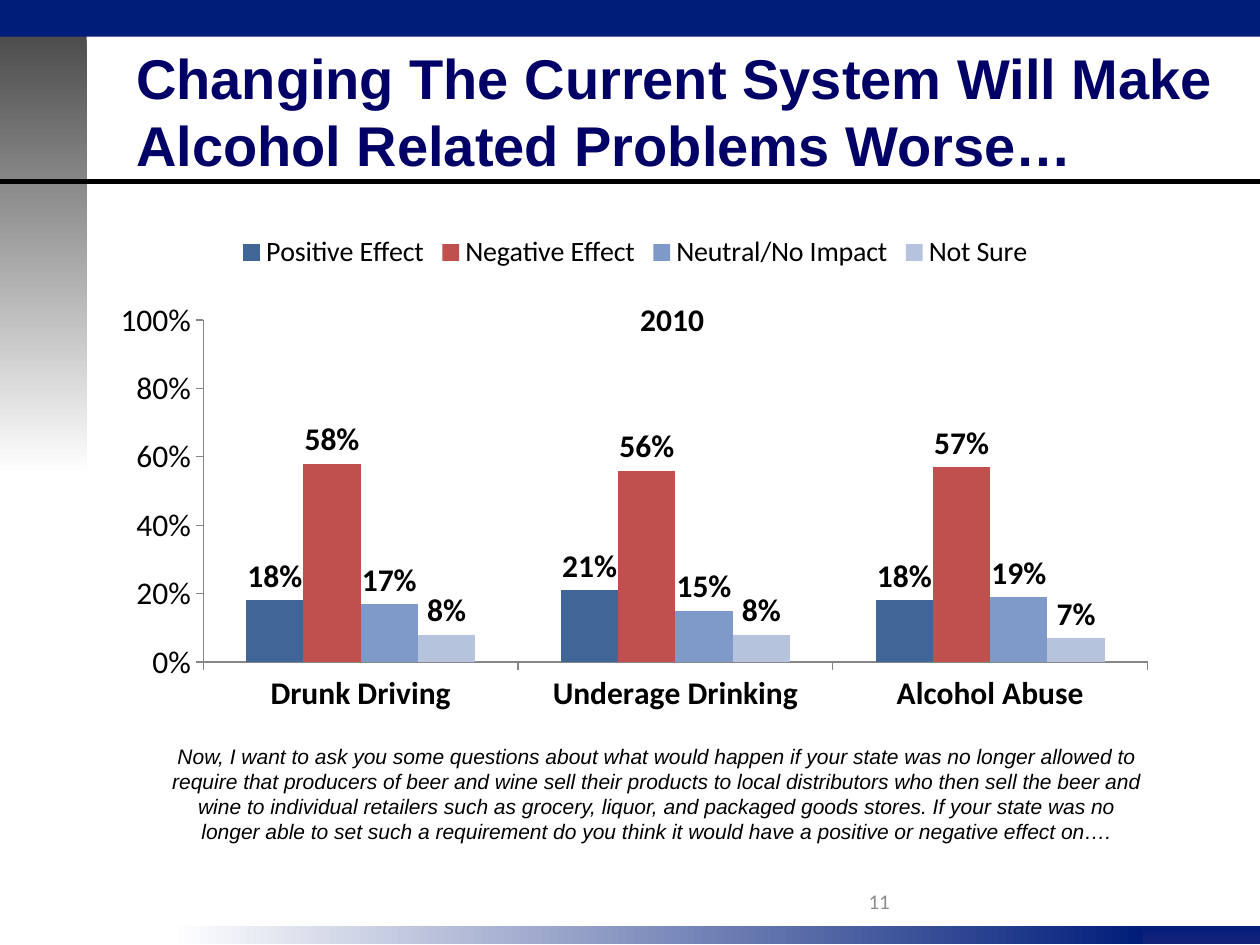
from lxml import etree
from pptx import Presentation
from pptx import util as u
from pptx.chart.data import CategoryChartData
from pptx.dml.color import RGBColor
from pptx.enum import chart as ch, shapes, text
from pptx.oxml import parse_xml
from pptx.oxml.ns import nsdecls, qn

COLORS = {
    "navy": "001D7A", "indigo": "17237B", "title": "000066",
    "black": "000000", "dark": "4D4D4D", "white": "FFFFFF",
    "number": "8C8C8C", "axis": "868686",
    "Positive Effect": "406698", "Negative Effect": "C0504D",
    "Neutral/No Impact": "7F9AC8", "Not Sure": "B5C3DC",
}


def rgb(name):
    return RGBColor.from_string(COLORS[name])


def write(sp, words, size, font, color, align, anchor, bold=False, italic=False):
    """Fill a shape with one formatted paragraph."""
    tf = sp.text_frame
    tf.text = words
    tf.word_wrap = True
    tf.auto_size = text.MSO_AUTO_SIZE.NONE
    tf.vertical_anchor = anchor
    p = tf.paragraphs[0]
    p.alignment = align
    f = p.runs[0].font
    f.size, f.name, f.bold, f.italic = u.Pt(size), font, bold, italic
    f.color.rgb = rgb(color)


prs = Presentation()
prs.slide_width, prs.slide_height = u.Cm(25.4), u.Cm(19.05)
s = prs.slides.add_slide(prs.slide_layouts[5])
left, center, right = text.PP_ALIGN.LEFT, text.PP_ALIGN.CENTER, text.PP_ALIGN.RIGHT
top, middle, bottom = text.MSO_ANCHOR.TOP, text.MSO_ANCHOR.MIDDLE, text.MSO_ANCHOR.BOTTOM

# Frame: bands with start colour, end colour and gradient angle
bands = [
    (5.82, 18.67, 19.58, 0.36, "navy", "indigo", 270),
    (0, 0.71, 1.75, 8.86, "dark", "white", 270),
    (3.43, 18.67, 19.61, 0.36, "white", "navy", 0),
    (0, 0, 25.4, 0.74, "navy", None, 0),
]
for x, y, w, h, start, end, angle in bands:
    sp = s.shapes.add_shape(shapes.MSO_SHAPE.RECTANGLE, u.Cm(x), u.Cm(y), u.Cm(w), u.Cm(h))
    sp.shadow.inherit = False
    sp.line.fill.background()
    if end:
        sp.fill.gradient()
        sp.fill.gradient_angle = angle
        for stop, color in zip(sp.fill.gradient_stops, (start, end)):
            stop.color.rgb = rgb(color)
    else:
        sp.fill.solid()
        sp.fill.fore_color.rgb = rgb(start)

rule = s.shapes.add_connector(shapes.MSO_CONNECTOR.STRAIGHT, 0, u.Cm(3.66), u.Cm(25.4), u.Cm(3.66))
rule.line.color.rgb = rgb("black")
rule.line.width = u.Pt(3)
etree.SubElement(rule._element.spPr, qn("a:effectLst"))

# Title
title = s.shapes.title
title.left, title.top, title.width, title.height = u.Cm(2.49), u.Cm(1.5), u.Cm(22.91), u.Cm(1.47)
write(title, "Changing The Current System Will Make Alcohol Related Problems Worse…",
      32, "Arial", "title", left, middle, bold=True)

# Chart
data = CategoryChartData(number_format="0%")
data.categories = ["Drunk Driving", "Underage Drinking", "Alcohol Abuse"]
data.add_series("Positive Effect", (0.18, 0.21, 0.18))
data.add_series("Negative Effect", (0.58, 0.56, 0.57))
data.add_series("Neutral/No Impact", (0.17, 0.15, 0.19))
data.add_series("Not Sure", (0.08, 0.08, 0.07))
chart = s.shapes.add_chart(ch.XL_CHART_TYPE.COLUMN_CLUSTERED, u.Cm(2.11), u.Cm(4.45),
                           u.Cm(21.39), u.Cm(10.16), data).chart
chart.has_title = False
chart.font.name, chart.font.size = "Calibri", u.Pt(18)
chart.font.color.rgb = rgb("black")
chart.has_legend = True
chart.legend.position = ch.XL_LEGEND_POSITION.TOP
chart.legend.include_in_layout = False
chart.legend.font.size = u.Pt(16)

for axis in (chart.category_axis, chart.value_axis):
    axis.has_major_gridlines = False
    axis.major_tick_mark = ch.XL_TICK_MARK.OUTSIDE
    axis.minor_tick_mark = ch.XL_TICK_MARK.NONE
    axis.format.line.color.rgb = rgb("axis")
chart.category_axis.tick_labels.font.bold = True
values = chart.value_axis
values.minimum_scale, values.maximum_scale, values.major_unit = 0, 1, 0.2
values.tick_labels.number_format = "0%"
values.tick_labels.number_format_is_linked = False

plot = chart.plots[0]
plot.gap_width, plot.overlap = 150, 0
plot.vary_by_categories = False
for series in plot.series:
    series.format.fill.solid()
    series.format.fill.fore_color.rgb = rgb(series.name)
    series.invert_if_negative = False
    labels = series.data_labels
    labels.show_value = True
    labels.number_format, labels.number_format_is_linked = "0%", False
    labels.position = ch.XL_LABEL_POSITION.OUTSIDE_END
    labels.font.bold = True

area = chart._chartSpace.chart.plotArea
for old in area.findall(qn("c:layout")):
    area.remove(old)
area.insert(0, parse_xml(
    f'<c:layout {nsdecls("c")}><c:manualLayout><c:layoutTarget val="inner"/>'
    '<c:xMode val="edge"/><c:yMode val="edge"/><c:x val="0.093"/><c:y val="0.197"/>'
    '<c:w val="0.89"/><c:h val="0.679"/></c:manualLayout></c:layout>'))

# Year, survey question and page number
question = (
    "Now, I want to ask you some questions about what would happen if your state was no longer "
    "allowed to require that producers of beer and wine sell their products to local distributors "
    "who then sell the beer and wine to individual retailers such as grocery, liquor, and packaged "
    "goods stores. If your state was no longer able to set such a requirement do you think it would "
    "have a positive or negative effect on….")
year_box = s.shapes.add_textbox(u.Cm(11.43), u.Cm(5.92), u.Cm(4.24), u.Cm(1.02))
write(year_box, "2010", 18, "Calibri", "black", center, top, bold=True)
question_box = s.shapes.add_textbox(u.Cm(3.18), u.Cm(15.67), u.Cm(20.14), u.Cm(1.47))
write(question_box, question, 12, "Arial", "black", center, bottom, italic=True)
number_box = s.shapes.add_textbox(u.Cm(12.27), u.Cm(17.65), u.Cm(5.92), u.Cm(1.02))
write(number_box, "11", 12, "Calibri", "number", right, middle)

prs.save("out.pptx")
